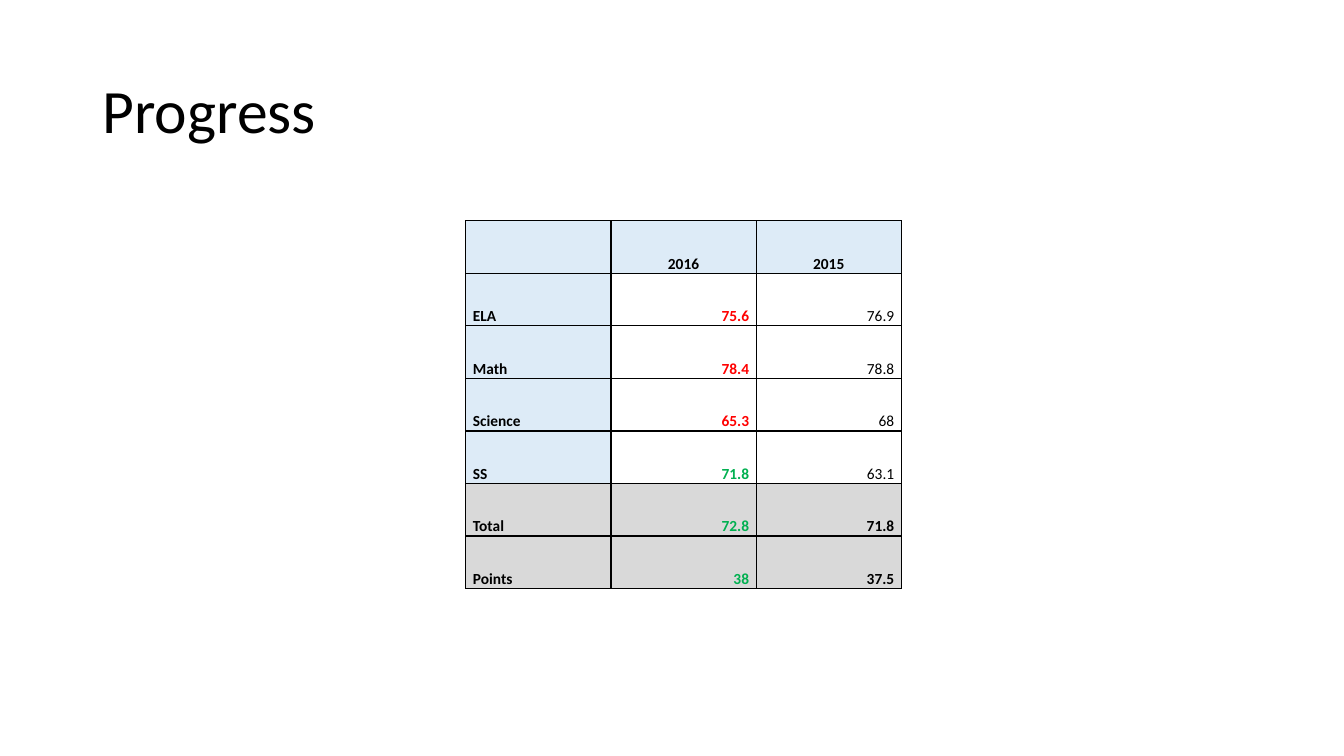
from lxml import etree
from pptx import Presentation
from pptx.dml.color import RGBColor
from pptx.enum.text import MSO_ANCHOR, PP_ALIGN
from pptx.oxml.ns import qn
from pptx.util import Inches, Pt

LEFT, CENTER, RIGHT = PP_ALIGN.LEFT, PP_ALIGN.CENTER, PP_ALIGN.RIGHT
MIDDLE, BOTTOM = MSO_ANCHOR.MIDDLE, MSO_ANCHOR.BOTTOM

TITLE = "Progress"
HEAD = ("", "2016", "2015")
SCORES = [
    ("ELA", "75.6", "76.9"),
    ("Math", "78.4", "78.8"),
    ("Science", "65.3", "68"),
    ("SS", "71.8", "63.1"),
]
SUMS = [
    ("Total", "72.8", "71.8"),
    ("Points", "38", "37.5"),
]
BLACK, RED, GREEN = "000000", "FF0000", "00B050"
BLUE, GRAY = "DDEBF7", "D9D9D9"
FONT = "Calibri"
COL_W, TABLE_H = 1.44, 3.65


def rgb(code):
    return RGBColor.from_string(code)


def write(frame, text, size, color=BLACK, bold=False, align=LEFT, spacing=1.07):
    frame.text = text
    para = frame.paragraphs[0]
    para.alignment = align
    para.line_spacing = spacing
    for run in para.runs:
        font = run.font
        font.name, font.size, font.bold = FONT, Pt(size), bold
        font.color.rgb = rgb(color)


def border(cell):
    """Draw a thin black line on all four sides."""
    props = cell._tc.get_or_add_tcPr()
    for side in ("lnL", "lnR", "lnT", "lnB"):
        line = etree.SubElement(props, qn("a:" + side), w=str(Pt(1)))
        fill = etree.SubElement(line, qn("a:solidFill"))
        etree.SubElement(fill, qn("a:srgbClr"), val=BLACK)


def look(row, col, rows):
    """Return fill, text colour, boldness and alignment of a cell."""
    top, total = row == 0, row > len(SCORES)
    fill = GRAY if total else BLUE if top or col == 0 else None
    color = BLACK
    if col == 1 and not top:
        now, before = map(float, rows[row][1:])
        color = GREEN if now > before else RED
    bold = top or total or col < 2
    align = CENTER if top else RIGHT if col else LEFT
    return fill, color, bold, align


def add_title(slide):
    box = slide.shapes.add_textbox(Inches(0.92), Inches(0.4), Inches(11.5), Inches(1.45))
    frame = box.text_frame
    frame.word_wrap = True
    frame.vertical_anchor = MIDDLE
    write(frame, TITLE, 44, spacing=0.9)


def add_scores(slide):
    rows = [HEAD, *SCORES, *SUMS]
    table = slide.shapes.add_table(
        len(rows), len(HEAD), Inches(4.62), Inches(2.19),
        Inches(COL_W * len(HEAD)), Inches(TABLE_H)).table
    table.first_row = table.horz_banding = False
    for column in table.columns:
        column.width = Inches(COL_W)
    for r, row in enumerate(rows):
        table.rows[r].height = Inches(TABLE_H / len(rows))
        for c, text in enumerate(row):
            cell = table.cell(r, c)
            fill, color, bold, align = look(r, c, rows)
            cell.vertical_anchor = BOTTOM
            cell.margin_left = cell.margin_right = Inches(0.07)
            cell.margin_top = cell.margin_bottom = 0
            border(cell)
            if fill:
                cell.fill.solid()
                cell.fill.fore_color.rgb = rgb(fill)
            else:
                cell.fill.background()
            write(cell.text_frame, text, 11, color, bold, align)


def main():
    deck = Presentation()
    deck.slide_width, deck.slide_height = Inches(13.33), Inches(7.5)
    slide = deck.slides.add_slide(deck.slide_layouts[6])
    add_title(slide)
    add_scores(slide)
    deck.save("out.pptx")


if __name__ == "__main__":
    main()
